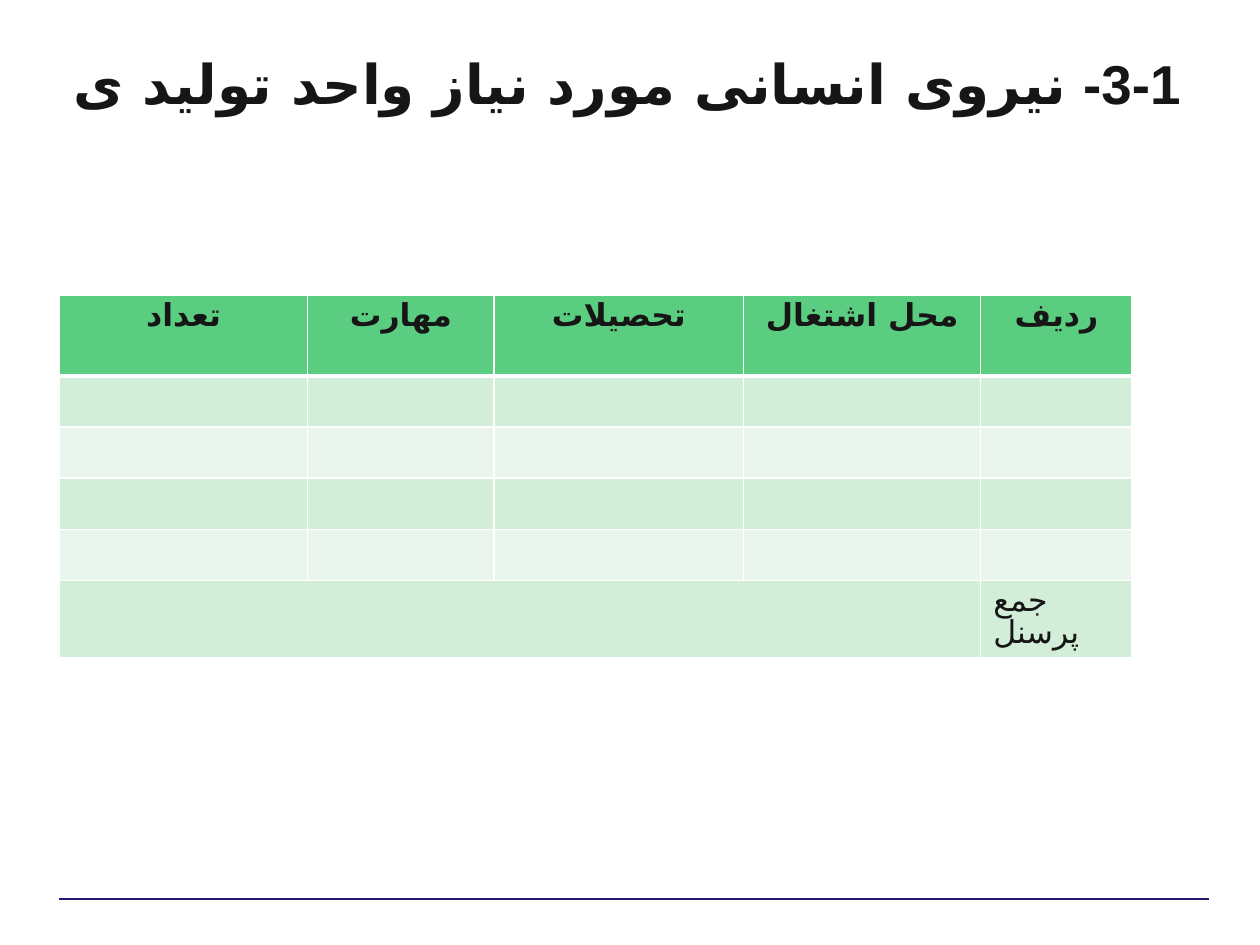
from lxml import etree
from pptx import Presentation
from pptx import util as u
from pptx.dml.color import RGBColor
from pptx.enum import shapes, text
from pptx.oxml import ns

FONT = "DejaVu Sans"
INK = "161616"
WHITE = "FFFFFF"
HEAD = "5BCD81"
BANDS = ("D2EDD8", "EAF6ED")


def paint(code):
    return RGBColor.from_string(code)


def write(par, words, size=18, bold=False, side=None, rtl=False, cs=FONT, space=None):
    run = par.add_run()
    run.text = words
    font = run.font
    font.size, font.bold, font.name = u.Pt(size), bold, FONT
    font.color.rgb = paint(INK)
    etree.SubElement(font._element, ns.qn("a:cs"), typeface=cs)
    if side is not None:
        par.alignment = side
    if space:
        par.line_spacing = space
    if rtl:
        par._p.get_or_add_pPr().set("rtl", "1")


class Deck:
    def __init__(self, width, height):
        self.prs = Presentation()
        self.prs.slide_width = u.Cm(width)
        self.prs.slide_height = u.Cm(height)
        self.slide = self.prs.slides.add_slide(self.prs.slide_layouts[6])

    def rule(self, left, right, top, code, width):
        line = self.slide.shapes.add_connector(
            shapes.MSO_CONNECTOR.STRAIGHT, u.Cm(left), u.Cm(top), u.Cm(right), u.Cm(top))
        line.line.color.rgb = paint(code)
        line.line.width = u.Pt(width)
        etree.SubElement(line._element.spPr, ns.qn("a:effectLst"))

    def title(self, box, parts):
        frame = self.slide.shapes.add_textbox(*map(u.Cm, box)).text_frame
        frame.word_wrap = True
        frame.vertical_anchor = text.MSO_ANCHOR.MIDDLE
        frame.margin_left, frame.margin_right = u.Cm(0), u.Cm(0.33)
        for words, cs in parts:
            write(frame.paragraphs[0], words, size=31.3, bold=True,
                  side=text.PP_ALIGN.RIGHT, rtl=True, cs=cs)

    def edge(self, cell, widths):
        props = cell._tc.get_or_add_tcPr()
        for spot, (side, width) in enumerate(zip("LRTB", widths)):
            line = etree.Element(ns.qn("a:ln" + side), w=str(u.Pt(width)))
            fill = etree.SubElement(line, ns.qn("a:solidFill"))
            etree.SubElement(fill, ns.qn("a:srgbClr"), val=WHITE)
            props.insert(spot, line)

    def table(self, left, top, cols, rows, heads, total):
        grid = self.slide.shapes.add_table(
            len(rows), len(cols), u.Cm(left), u.Cm(top),
            u.Cm(sum(cols)), u.Cm(sum(rows))).table
        for col, width in zip(grid.columns, cols):
            col.width = u.Cm(width)
        for row, (line, height) in enumerate(zip(grid.rows, rows)):
            line.height = u.Cm(height)
            for cell in line.cells:
                cell.fill.solid()
                cell.fill.fore_color.rgb = paint(BANDS[(row - 1) % 2] if row else HEAD)
                self.edge(cell, (1, 1, 3 if row == 1 else 1, 1 if row else 3))
        for cell, words in zip(grid.rows[0].cells, heads):
            write(cell.text_frame.paragraphs[0], words, bold=True,
                  side=text.PP_ALIGN.CENTER, rtl=True, space=0.85)
        last = len(rows) - 1
        grid.cell(last, 0).merge(grid.cell(last, len(cols) - 2))
        write(grid.cell(last, len(cols) - 1).text_frame.paragraphs[0], total, space=0.86)


def main():
    deck = Deck(25.4, 19.05)
    deck.rule(1.19, 24.38, 18.13, "2B166E", 1)
    deck.title((1.27, 0.89, 22.86, 1.57),
               (("3-1- ", "Liberation Sans"), ("نیروی انسانی مورد نیاز واحد تولید ی", FONT)))
    deck.table(1.2, 5.95, (5, 3.76, 5.03, 4.78, 3.05), (1.63, *[1.03] * 4, 1.5),
               ("تعداد", "مهارت", "تحصیلات", "محل اشتغال", "ردیف"), "جمع پرسنل")
    deck.prs.save("out.pptx")


if __name__ == "__main__":
    main()
